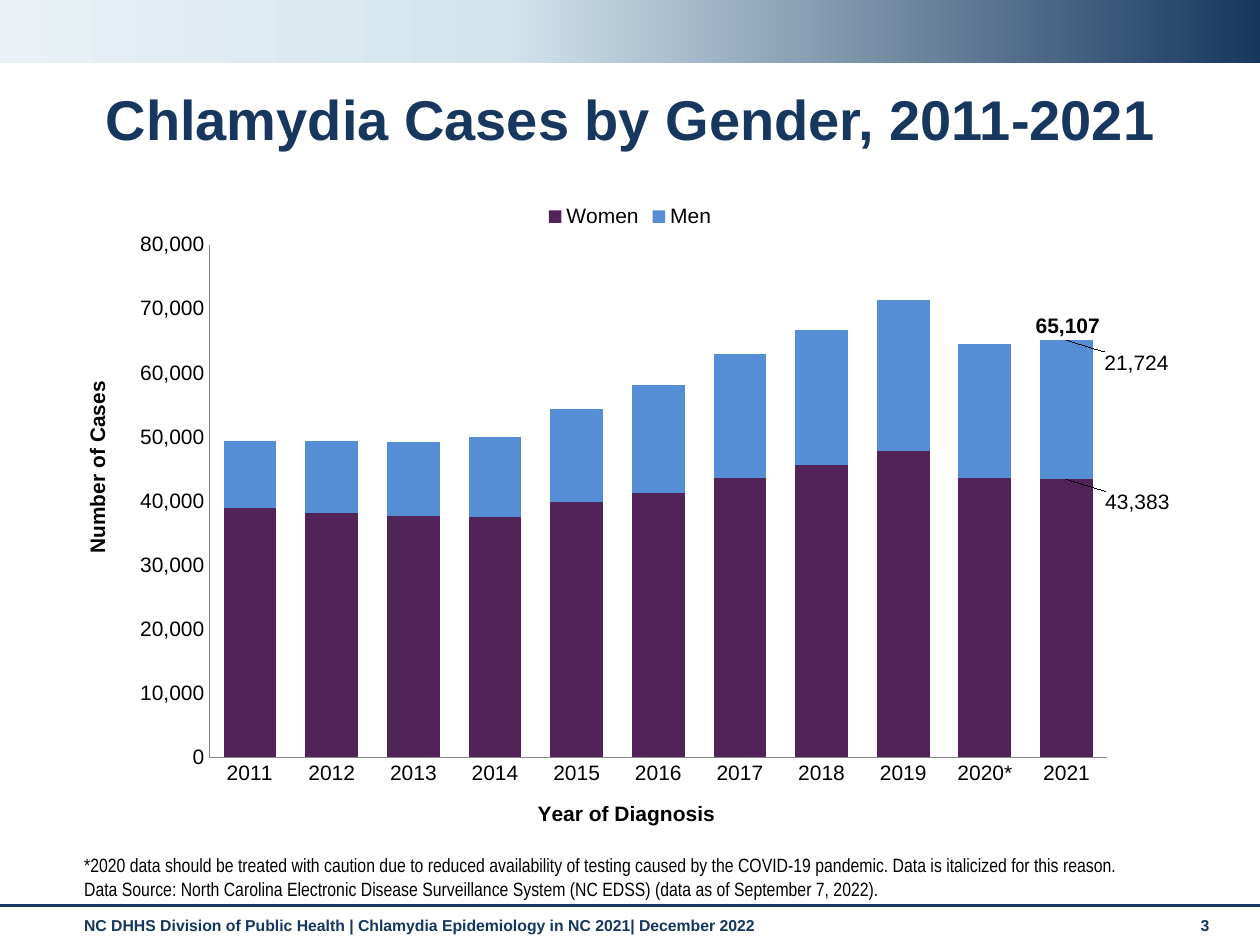
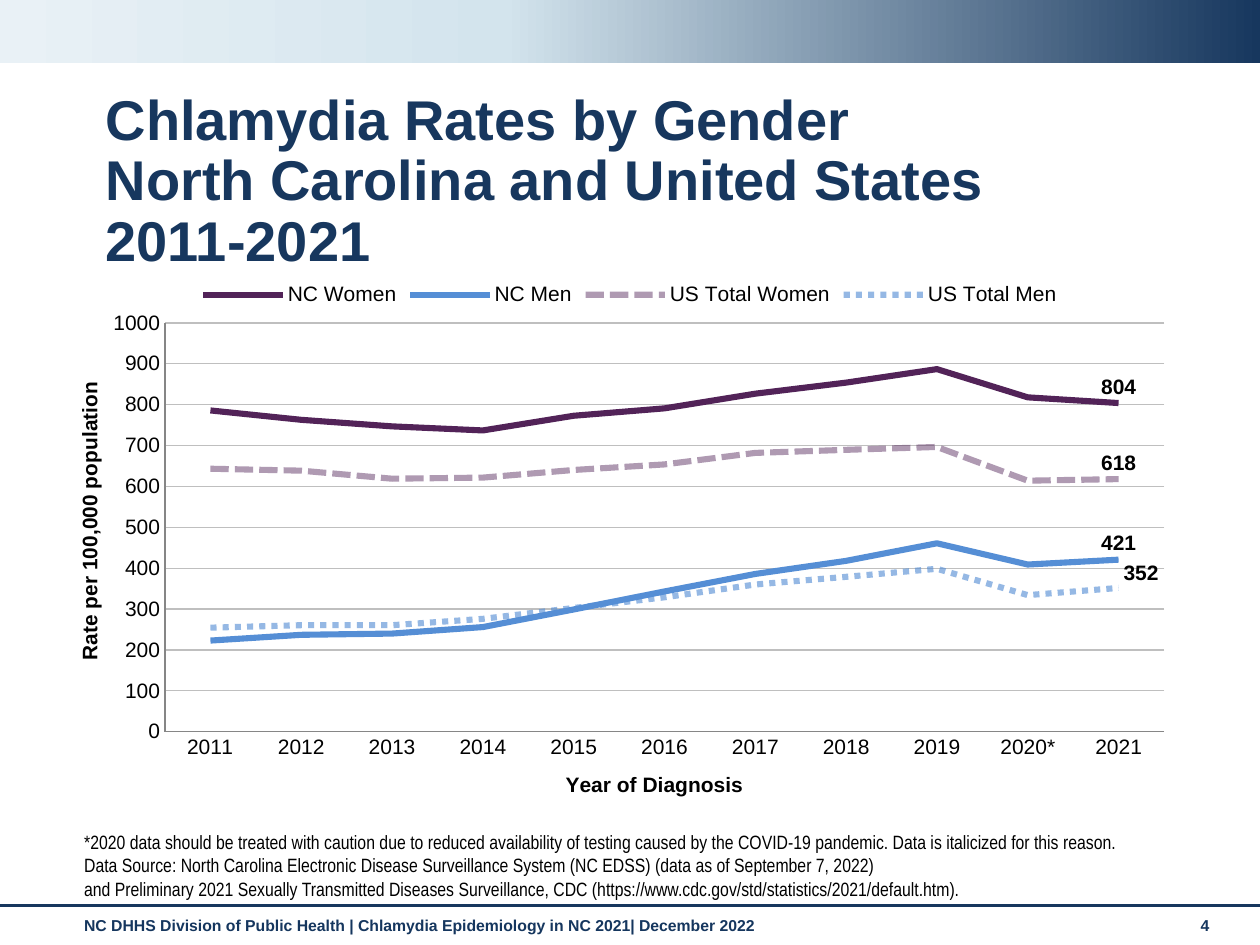
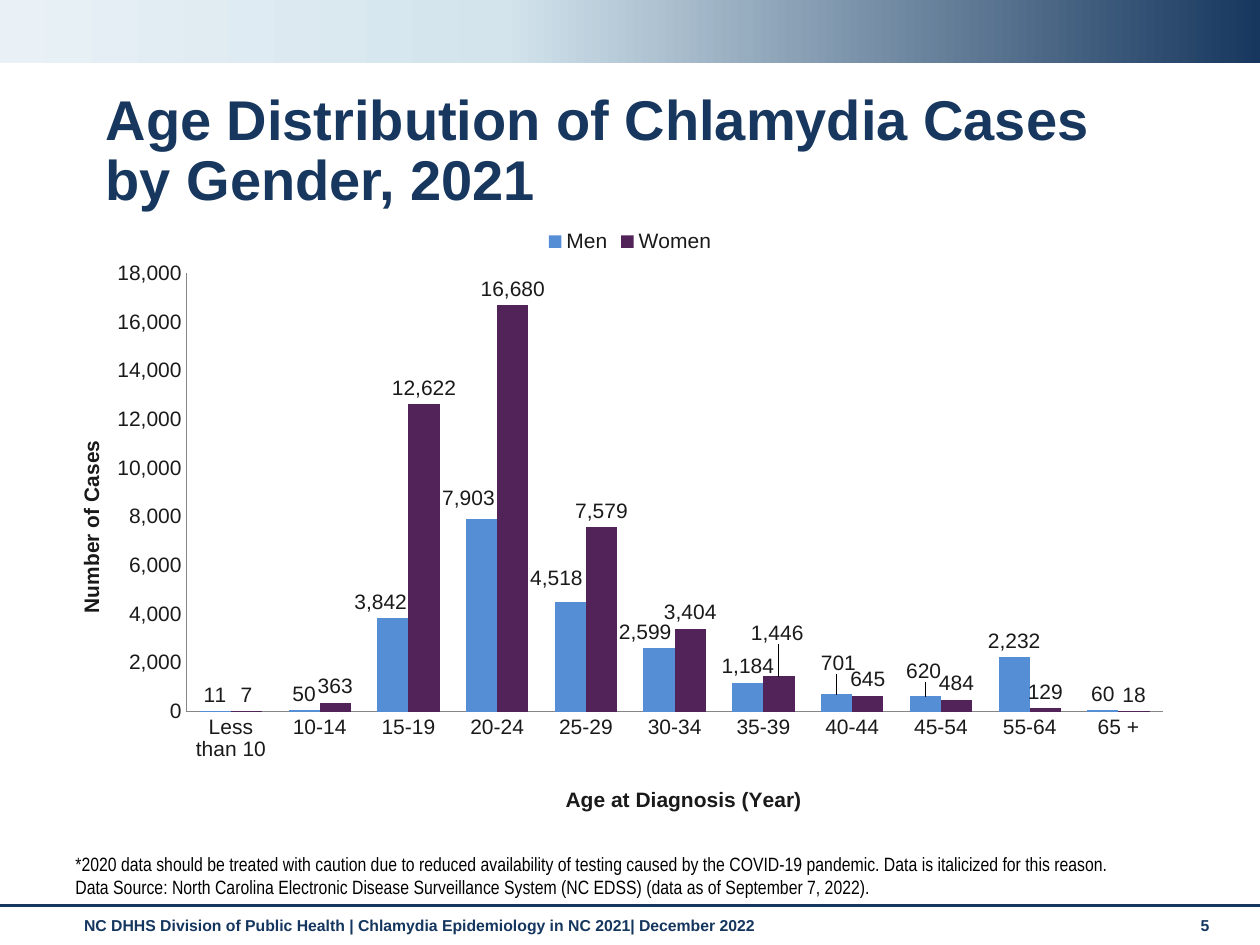
import dataclasses

import lxml.etree
import pptx
import pptx.chart.data
import pptx.dml.color
import pptx.enum.chart
import pptx.enum.dml
import pptx.enum.shapes
import pptx.enum.text
import pptx.oxml.ns
import pptx.util

Pt = pptx.util.Pt
qn = pptx.oxml.ns.qn
ChartType = pptx.enum.chart.XL_CHART_TYPE
LabelPosition = pptx.enum.chart.XL_LABEL_POSITION
Dash = pptx.enum.dml.MSO_LINE
Align = pptx.enum.text.PP_ALIGN
Anchor = pptx.enum.text.MSO_ANCHOR

# Shared look
NAVY, FOOTER_NAVY = "17375E", "15365E"
WOMEN, MEN = "522358", "558ED5"
BLACK, CHARCOAL = "000000", "1A1A1A"
AXIS_GRAY, GRID_GRAY = "868686", "BFBFBF"
BAND_STOPS = [(0, NAVY), (60, "D3E4ED"), (100, "E9F1F6")]
CHART_LEFT, CHART_WIDTH = 36, 648
CHART_SIZE = 12

# Shared wording
FOOTER = "NC DHHS Division of Public Health | Chlamydia Epidemiology in NC 2021| December 2022"
CAUTION = ("*2020 data should be treated with caution due to reduced availability of testing "
           "caused by the COVID-19 pandemic. Data is italicized for this reason.")
SOURCE = ("Data Source: North Carolina Electronic Disease Surveillance System (NC EDSS) "
          "(data as of September 7, 2022)")
YEARS = [str(year) for year in range(2011, 2020)] + ["2020*", "2021"]
LATEST = len(YEARS) - 1
AGES = ["Less than 10", "10-14", "15-19", "20-24", "25-29", "30-34",
        "35-39", "40-44", "45-54", "55-64", "65 +"]


@dataclasses.dataclass
class Series:
    """One data series; shifts maps a point to its label's offset in points."""
    name: str
    values: list
    color: str
    shifts: dict
    position: object
    label_all: bool = False
    label_bold: bool = False
    dash: object = None
    opacity: int = 100


@dataclasses.dataclass
class Axis:
    """Wording and place of an axis title, and the scale of a value axis."""
    title: str
    title_at: tuple
    maximum: int = 0
    step: int = 0
    number_format: str = "General"
    grid: bool = False


def rgb(color):
    return pptx.dml.color.RGBColor.from_string(color)


def set_font(font, *, size, color, name="Arial", bold=False):
    font.name = name
    font.size = Pt(size)
    font.bold = bold
    font.color.rgb = rgb(color)


def add_text(page, paragraphs, left, top, width, height, *, size, color, name="Arial",
             bold=False, align=Align.LEFT, anchor=Anchor.TOP, spacing=1.0):
    box = page.shapes.add_textbox(Pt(left), Pt(top), Pt(width), Pt(height))
    frame = box.text_frame
    frame.word_wrap = True
    frame.vertical_anchor = anchor
    for number, text in enumerate(paragraphs):
        para = frame.add_paragraph() if number else frame.paragraphs[0]
        para.text = text
        para.alignment = align
        para.line_spacing = spacing
        for span in para.runs:
            set_font(span.font, size=size, color=color, name=name, bold=bold)


# Page furniture
def add_band(page):
    band = page.shapes.add_shape(pptx.enum.shapes.MSO_SHAPE.RECTANGLE, 0, 0, Pt(720), Pt(36))
    band.shadow.inherit = False
    band.line.fill.background()
    band.fill.gradient()
    band.fill.gradient_angle = 180
    stops = band._element.spPr.find(qn("a:gradFill")).find(qn("a:gsLst"))
    for stop in list(stops):
        stops.remove(stop)
    for percent, color in BAND_STOPS:
        stop = lxml.etree.SubElement(stops, qn("a:gs"), pos=str(percent * 1000))
        lxml.etree.SubElement(stop, qn("a:srgbClr"), val=color)


def add_footer(page, number):
    rule = page.shapes.add_connector(pptx.enum.shapes.MSO_CONNECTOR.STRAIGHT,
                                     0, Pt(517.5), Pt(720), Pt(517.5))
    rule.line.color.rgb = rgb(NAVY)
    rule.line.width = Pt(1.75)
    lxml.etree.SubElement(rule._element.spPr, qn("a:effectLst"))
    for text, left, width in [(FOOTER, 41, 629), (str(number), 679, 32)]:
        add_text(page, [text], left, 520, width, 21, size=9, color=FOOTER_NAVY, bold=True)


def add_page(deck, number, title, title_width=631):
    page = deck.slides.add_slide(deck.slide_layouts[6])
    add_band(page)
    add_footer(page, number)
    add_text(page, [title], 53.3, 49, title_width, 43, size=32, color=NAVY, bold=True,
             spacing=0.9)
    return page


def add_notes_line(page, sources, left=41, top=491.8):
    add_text(page, [CAUTION, *sources], left, top, 655, 26, size=11, color=BLACK,
             name="Arial Narrow", anchor=Anchor.BOTTOM)


# Charts
def set_layout(parent, index, height, *, inner=False, edge=False, **lengths):
    """Place a chart part by lengths in points within a chart of the given height."""
    for former in parent.findall(qn("c:layout")):
        parent.remove(former)
    layout = lxml.etree.Element(qn("c:layout"))
    manual = lxml.etree.SubElement(layout, qn("c:manualLayout"))
    if inner:
        lxml.etree.SubElement(manual, qn("c:layoutTarget"), val="inner")
    if edge:
        for mode in ("c:xMode", "c:yMode"):
            lxml.etree.SubElement(manual, qn(mode), val="edge")
    for key, length in lengths.items():
        whole = CHART_WIDTH if key in "xw" else height
        lxml.etree.SubElement(manual, qn("c:" + key), val=str(length / whole))
    parent.insert(index, layout)


def style_axis(axis, look, height, color, rotation):
    axis.major_tick_mark = axis.minor_tick_mark = pptx.enum.chart.XL_TICK_MARK.NONE
    axis.format.line.color.rgb = rgb(AXIS_GRAY)
    axis.format.line.width = Pt(0.75)
    axis.has_major_gridlines = look.grid
    if look.grid:
        axis.major_gridlines.format.line.color.rgb = rgb(GRID_GRAY)
        axis.major_gridlines.format.line.width = Pt(0.75)
    if look.maximum:
        axis.minimum_scale = 0
        axis.maximum_scale = look.maximum
        axis.major_unit = look.step
        axis.tick_labels.number_format = look.number_format
        axis.tick_labels.number_format_is_linked = False
    frame = axis.axis_title.text_frame
    frame.text = look.title
    frame._txBody.bodyPr.set("rot", str(rotation * 60000))
    set_font(frame.paragraphs[0].runs[0].font, size=CHART_SIZE, color=color, bold=True)
    left, top = look.title_at
    set_layout(axis.axis_title._element, 1, height, edge=True, x=left, y=top)


def style_series(series, look, is_line):
    if not is_line:
        series.format.fill.solid()
        series.format.fill.fore_color.rgb = rgb(look.color)
        series.invert_if_negative = False
        return
    series.smooth = False
    series.marker.style = pptx.enum.chart.XL_MARKER_STYLE.NONE
    line = series.format.line
    line.color.rgb = rgb(look.color)
    line.width = Pt(3.5)
    if look.dash:
        line.dash_style = look.dash
    if look.opacity < 100:
        tint = next(series._element.iter(qn("a:srgbClr")))
        lxml.etree.SubElement(tint, qn("a:alpha"), val=str(look.opacity * 1000))


def label_series(series, look, height, color):
    labels = series.data_labels
    labels.show_value = look.label_all
    labels.number_format = "#,##0"
    labels.number_format_is_linked = False
    labels.position = look.position
    set_font(labels.font, size=CHART_SIZE, color=color, bold=look.label_bold)
    for point, (right, down) in look.shifts.items():
        label = series.points[point].data_label
        set_font(label.font, size=CHART_SIZE, color=color, bold=look.label_bold)
        label.position = look.position
        if right or down:
            set_layout(label._get_or_add_dLbl(), 1, height, x=right, y=down)


def add_chart(page, kind, categories, all_series, category_axis, value_axis, *,
              top, height, plot_area, color=BLACK, gap=None):
    data = pptx.chart.data.CategoryChartData(number_format="#,##0")
    data.categories = categories
    for look in all_series:
        data.add_series(look.name, look.values)
    chart = page.shapes.add_chart(kind, Pt(CHART_LEFT), Pt(top), Pt(CHART_WIDTH),
                                  Pt(height), data).chart
    chart.has_title = False
    set_font(chart.font, size=CHART_SIZE, color=color)
    chart.has_legend = True
    chart.legend.position = pptx.enum.chart.XL_LEGEND_POSITION.TOP
    chart.legend.include_in_layout = False
    plot = chart.plots[0]
    plot.vary_by_categories = False
    if gap is not None:
        plot.gap_width = gap
    style_axis(chart.category_axis, category_axis, height, color, 0)
    style_axis(chart.value_axis, value_axis, height, color, -90)
    for series, look in zip(plot.series, all_series):
        style_series(series, look, kind == ChartType.LINE)
        label_series(series, look, height, color)
    set_layout(chart._chartSpace.chart.plotArea, 0, height, inner=True, edge=True,
               **dict(zip("xywh", plot_area)))


# Slides
def add_cases_page(deck):
    page = add_page(deck, 3, "Chlamydia Cases by Gender, 2011-2021")
    add_notes_line(page, [SOURCE + "."])
    inside = LabelPosition.INSIDE_END
    women = [38919, 38158, 37713, 37584, 39798, 41209, 43627, 45558, 47852, 43635, 43383]
    men = [10510, 11269, 11497, 12388, 14590, 16963, 19330, 21154, 23549, 20878, 21724]
    add_chart(page, ChartType.COLUMN_STACKED, YEARS,
              [Series("Women", women, WOMEN, {LATEST: (40.5, 4)}, inside),
               Series("Men", men, MEN, {LATEST: (40, 4)}, inside)],
              Axis("Year of Diagnosis", (269, 349)),
              Axis("Number of Cases", (10, 108), 80000, 10000, "#,##0"),
              top=109.4, height=365.8, plot_area=(83.6, 30.7, 513.2, 295.6), gap=55)
    add_text(page, ["65,107"], 577.4, 175, 65.5, 21.6, size=12, color=BLACK, bold=True,
             align=Align.CENTER)


def add_rates_page(deck):
    page = add_page(deck, 4, "Chlamydia Rates by Gender\vNorth Carolina and United States"
                    "\v2011-2021", title_width=666)
    add_notes_line(page, [SOURCE, "and Preliminary 2021 Sexually Transmitted Diseases "
                          "Surveillance, CDC (https://www.cdc.gov/std/statistics/2021/"
                          "default.htm)."])
    above, beside = LabelPosition.ABOVE, LabelPosition.RIGHT
    nc_women = [786, 763, 747, 737, 773, 791, 827, 854, 887, 818, 804]
    nc_men = [223, 237, 240, 256, 299, 343, 386, 418, 461, 409, 421]
    us_women = [643.4, 638.7, 619, 621.6, 640.4, 653.9, 682.1, 689.6, 696.6, 614.1, 618]
    us_men = [254.4, 260.6, 260.6, 276.1, 302.7, 328.7, 360.1, 378.9, 398.6, 334.2, 351.7]
    at_end = {LATEST: (0, 0)}
    add_chart(page, ChartType.LINE, YEARS,
              [Series("NC Women", nc_women, WOMEN, at_end, above, label_bold=True),
               Series("NC Men", nc_men, MEN, at_end, above, label_bold=True),
               Series("US Total Women", us_women, WOMEN, at_end, above, label_bold=True,
                      dash=Dash.SQUARE_DOT, opacity=46),
               Series("US Total Men", us_men, MEN, {LATEST: (0, -8.5)}, beside,
                      label_bold=True, dash=Dash.ROUND_DOT, opacity=62)],
              Axis("Year of Diagnosis", (285, 287.5)),
              Axis("Rate per 100,000 population", (5.5, 64), 1000, 100, grid=True),
              top=154.1, height=304.6, plot_area=(58.3, 30.8, 570.9, 235.8))


def add_ages_page(deck):
    page = add_page(deck, 5, "Age Distribution of Chlamydia Cases by Gender, 2021",
                    title_width=618)
    outside = LabelPosition.OUTSIDE_END
    men = [11, 50, 3842, 7903, 4518, 2599, 1184, 701, 620, 2232, 60]
    women = [7, 363, 12622, 16680, 7579, 3404, 1446, 645, 484, 129, 18]
    men_shifts = {2: (-7, 0), 3: (-7.5, -3), 4: (-8, -4), 5: (-8, 0), 7: (1, -9), 8: (-1, -5)}
    add_chart(page, ChartType.COLUMN_CLUSTERED, AGES,
              [Series("Men", men, MEN, men_shifts, outside, label_all=True),
               Series("Women", women, WOMEN, {6: (-1, -15.5)}, outside, label_all=True)],
              Axis("Age at Diagnosis (Year)", (285, 326)),
              Axis("Number of Cases", (6.5, 127.5), 18000, 2000, "#,##0"),
              top=123.8, height=343.4, plot_area=(70.6, 32.6, 557.9, 252.4),
              color=CHARCOAL, gap=85)
    add_notes_line(page, [SOURCE + "."], left=36, top=491)


def main():
    deck = pptx.Presentation()
    deck.slide_width, deck.slide_height = Pt(720), Pt(540)
    add_cases_page(deck)
    add_rates_page(deck)
    add_ages_page(deck)
    deck.save("out.pptx")


if __name__ == "__main__":
    main()
